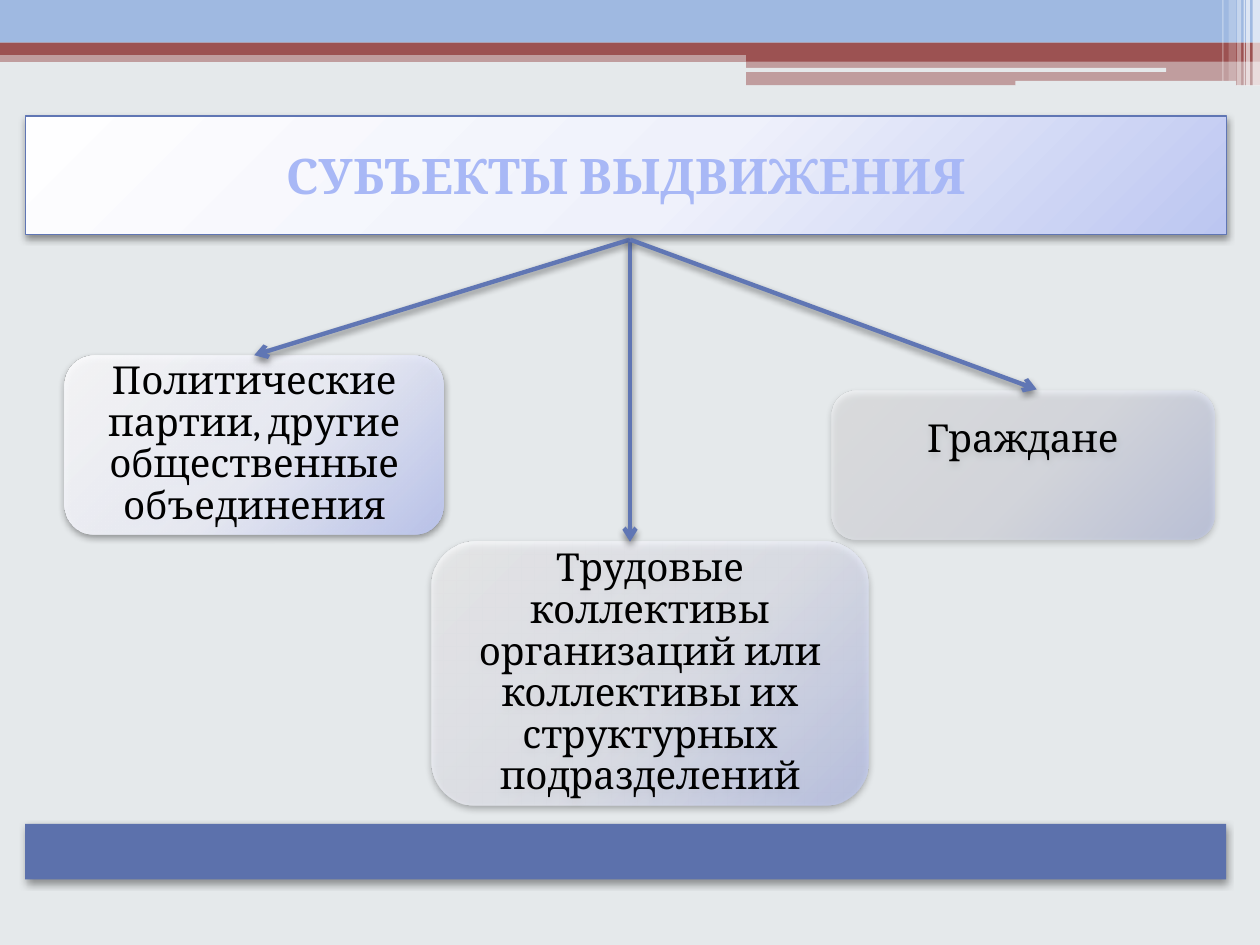
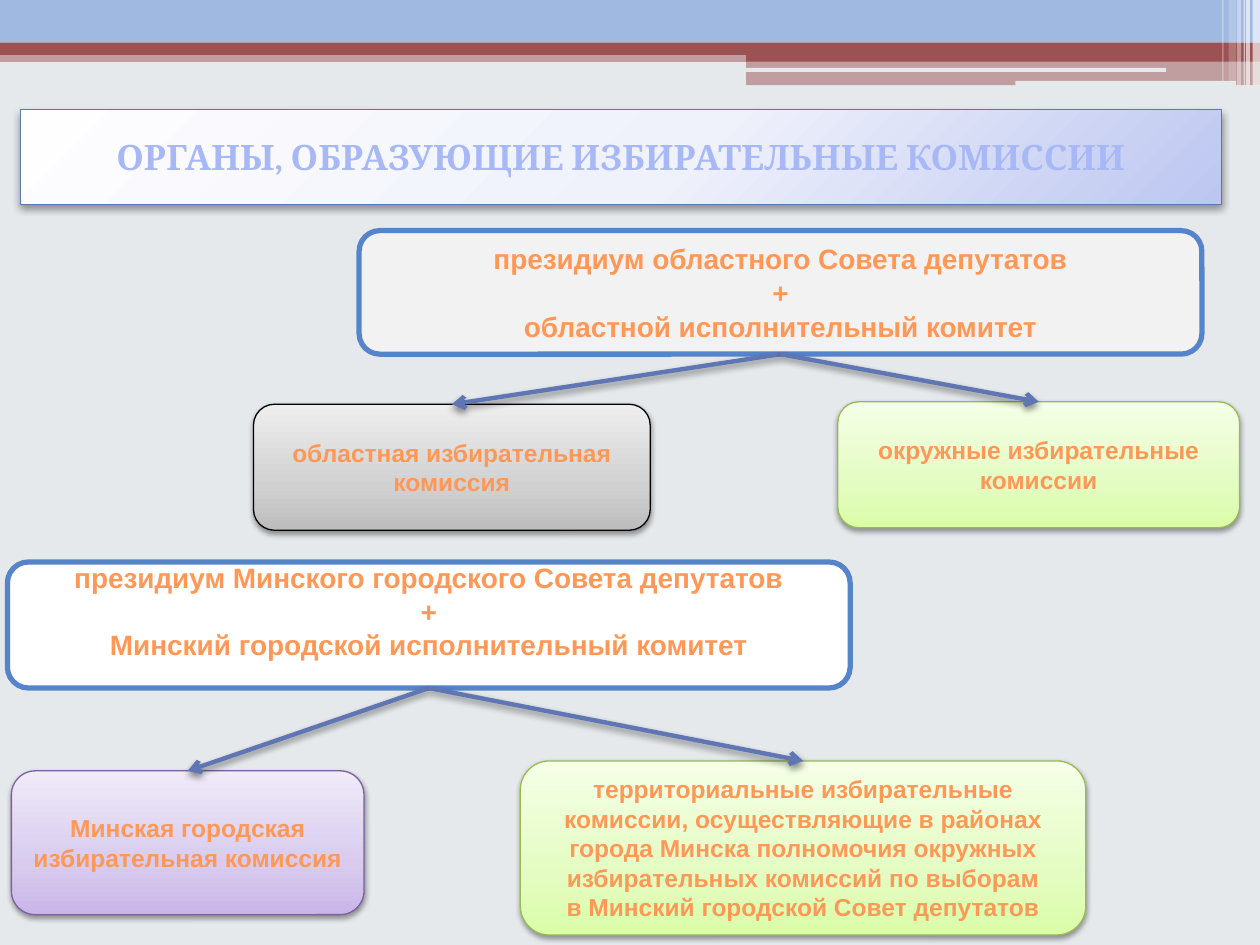
from dataclasses import dataclass
from typing import NamedTuple, Optional

from lxml.etree import SubElement
from pptx import Presentation
from pptx.dml.color import RGBColor
from pptx.enum.shapes import MSO_CONNECTOR, MSO_SHAPE
from pptx.enum.text import MSO_ANCHOR, MSO_AUTO_SIZE, PP_ALIGN
from pptx.oxml.ns import qn
from pptx.util import Cm, Pt

COLOURS = {
    "page": "E5E9EB", "sky": "9FB9E1", "brick": "9C5252", "white": "FFFFFF",
    "black": "000000", "periwinkle": "A8B8F6", "orange": "FF9856",
    "indigo": "6076B4", "base": "5C71AC", "frame": "5684CA", "mist": "F2F2F2",
    "lime line": "98B955", "violet line": "7D60A0",
}
GRADIENTS = {
    "pearl": ((0, "FEFEFF"), (55, "EFF1FB"), (100, "BCC6F1")),
    "grey": ((0, "BDBDBD"), (35, "D1D1D1"), (100, "EEEEEE")),
    "lime": ((0, "DAFDA7"), (35, "E4FCC2"), (100, "F5FFE7")),
    "violet": ((0, "C9B5E8"), (35, "D8CBEE"), (100, "F0EAF9")),
}
TOP, BOTTOM = 0, 2


class Box(NamedTuple):
    left: float
    top: float
    width: float
    height: float

    def lengths(self) -> tuple:
        return tuple(Cm(value) for value in self)


class Shadow(NamedTuple):
    opacity: int
    blur: float
    distance: float


DEEP_SHADOW = Shadow(40, 4.1, 2)
SOFT_SHADOW = Shadow(38, 3.1, 1.6)
ARROW_SHADOW = Shadow(45, 4, 2)


@dataclass(frozen=True)
class Band:
    box: Box
    colour: str
    opacity: int = 100
    rounded: bool = False


@dataclass(frozen=True)
class TextStyle:
    font: str
    size: int
    colour: str
    bold: bool = True
    spacing: float = 1.0
    inset_x: float = 0.25
    inset_y: float = 0.13


SUBJECT_TEXT = TextStyle("Cambria", 22, "black", False, 0.9, 0.23, 0.23)
FOUNDER_TEXT = TextStyle("Arial", 16, "orange")
COMMISSION_TEXT = TextStyle("Arial", 14, "orange")


@dataclass(frozen=True)
class Card:
    box: Box
    paragraphs: tuple
    style: TextStyle
    fill: str
    line: Optional[str] = None
    line_width: float = 0.75
    opacity: int = 100
    shadow: Optional[Shadow] = SOFT_SHADOW
    lift: float = 0  # extra bottom inset that raises the text


BANDS = [
    Band(Box(0, 1.02, 25.4, 0.23), "brick", 50),
    Band(Box(0, 0, 25.4, 0.86), "sky"),
    Band(Box(0, 0.86, 25.4, 0.25), "brick"),
    Band(Box(15.04, 0.99, 10.36, 0.25), "brick"),
    Band(Box(15.04, 1.22, 10.36, 0.5), "brick", 50),
    Band(Box(15.01, 1.37, 8.5, 0.08), "page", rounded=True),
    Band(Box(20.47, 1.63, 4.45, 0.1), "page", rounded=True),
] + [
    Band(Box(left, 0, width, height), "white", opacity)
    for left, width, height, opacity in (
        (25.25, 0.15, 1.73, 65), (25.12, 0.08, 1.73, 65), (25.07, 0.03, 1.73, 60),
        (24.94, 0.08, 1.73, 40), (24.77, 0.15, 1.63, 20), (24.64, 0.03, 1.63, 30),
    )
]

SUBJECTS = [
    Card(Box(1.3, 7.16, 7.65, 3.61),
         ("Политические партии, другие общественные объединения",),
         SUBJECT_TEXT, "pearl", opacity=90, shadow=DEEP_SHADOW),
    Card(Box(8.71, 10.92, 8.79, 5.31),
         ("Трудовые коллективы организаций или коллективы их "
          "структурных подразделений",),
         SUBJECT_TEXT, "pearl", opacity=70, shadow=DEEP_SHADOW),
    Card(Box(16.76, 7.87, 7.72, 3), ("Граждане",),
         SUBJECT_TEXT, "pearl", opacity=50, shadow=DEEP_SHADOW, lift=1),
]

# Each founding body is followed by the commissions it forms.
FOUNDERS = [
    (Card(Box(7.24, 4.65, 16.99, 2.49),
          ("президиум областного Совета депутатов", "+",
           "областной исполнительный комитет"),
          FOUNDER_TEXT, "mist", "frame", 3, shadow=None),
     [Card(Box(5.11, 8.15, 8, 2.54), ("областная избирательная комиссия",),
           COMMISSION_TEXT, "grey", "black"),
      Card(Box(16.89, 8.1, 8.1, 2.54), ("окружные избирательные комиссии",),
           COMMISSION_TEXT, "lime", "lime line")]),
    (Card(Box(0.15, 11.33, 16.99, 2.54),
          ("президиум Минского городского Совета депутатов", "+",
           "Минский городской исполнительный комитет"),
          FOUNDER_TEXT, "white", "frame", 3, shadow=None, lift=0.56),
     [Card(Box(0.23, 15.54, 7.11, 2.9),
           ("Минская городская избирательная комиссия",),
           COMMISSION_TEXT, "violet", "violet line"),
      Card(Box(10.49, 15.34, 11.4, 3.51),
           ("территориальные избирательные комиссии, осуществляющие в районах "
            "города Минска полномочия окружных избирательных комиссий по выборам\n"
            "в Минский городской Совет депутатов",),
           COMMISSION_TEXT, "lime", "lime line")]),
]


def rgb(name: str) -> RGBColor:
    return RGBColor.from_string(COLOURS[name])


def add_colour(parent, value: str, opacity: int) -> None:
    colour = SubElement(parent, qn("a:srgbClr"), val=value)
    if opacity < 100:
        SubElement(colour, qn("a:alpha"), val=str(opacity * 1000))


def paint(shape, fill: str, opacity: int = 100) -> None:
    """Fill with a named colour or gradient at the given opacity."""
    shape.fill.solid()
    properties = shape.element.spPr
    solid = properties.find(qn("a:solidFill"))
    if fill in COLOURS:
        add_colour(solid, COLOURS[fill], opacity)
        return
    gradient = SubElement(properties, qn("a:gradFill"), rotWithShape="1")
    stops = SubElement(gradient, qn("a:gsLst"))
    for position, value in GRADIENTS[fill]:
        add_colour(SubElement(stops, qn("a:gs"), pos=str(position * 1000)),
                   value, opacity)
    if fill == "pearl":
        circle = SubElement(gradient, qn("a:path"), path="circle")
        SubElement(circle, qn("a:fillToRect"),
                   l="-40000", t="-90000", r="140000", b="190000")
    else:
        SubElement(gradient, qn("a:lin"), ang=str(270 * 60000), scaled="0")
    properties.replace(solid, gradient)


def outline(shape, colour: Optional[str], width: float = 0.75) -> None:
    if colour is None:
        shape.line.fill.background()
    else:
        shape.line.color.rgb = rgb(colour)
        shape.line.width = Pt(width)


def cast_shadow(shape, shadow: Optional[Shadow]) -> None:
    """Replace the theme shadow; call after fill and line are set."""
    effects = SubElement(shape.element.spPr, qn("a:effectLst"))
    if shadow:
        outer = SubElement(effects, qn("a:outerShdw"),
                           blurRad=str(Pt(shadow.blur)), dist=str(Pt(shadow.distance)),
                           dir=str(90 * 60000), algn="t", rotWithShape="0")
        add_colour(outer, COLOURS["black"], shadow.opacity)


def write(shape, paragraphs: tuple, style: TextStyle, lift: float = 0) -> None:
    frame = shape.text_frame
    frame.word_wrap = True
    frame.auto_size = MSO_AUTO_SIZE.NONE
    frame.vertical_anchor = MSO_ANCHOR.MIDDLE
    frame.margin_left = frame.margin_right = Cm(style.inset_x)
    frame.margin_top = Cm(style.inset_y)
    frame.margin_bottom = Cm(style.inset_y + lift)
    for index, text in enumerate(paragraphs):
        paragraph = frame.add_paragraph() if index else frame.paragraphs[0]
        paragraph.alignment = PP_ALIGN.CENTER
        paragraph.line_spacing = style.spacing
        for row, line in enumerate(text.split("\n")):
            if row:
                paragraph.add_line_break()
            run = paragraph.add_run()
            run.text = line
            run.font.name = style.font
            run.font.size = Pt(style.size)
            run.font.bold = style.bold
            run.font.color.rgb = rgb(style.colour)


def add_block(slide, box: Box, fill: str, opacity: int = 100, rounded: bool = False):
    kind = MSO_SHAPE.ROUNDED_RECTANGLE if rounded else MSO_SHAPE.RECTANGLE
    block = slide.shapes.add_shape(kind, *box.lengths())
    paint(block, fill, opacity)
    return block


def add_card(slide, card: Card):
    block = add_block(slide, card.box, card.fill, card.opacity, rounded=True)
    outline(block, card.line, card.line_width)
    cast_shadow(block, card.shadow)
    write(block, card.paragraphs, card.style, card.lift)
    return block


def add_arrow(slide, start: tuple = (0, 0), end: tuple = (0, 0),
              source=None, target=None) -> None:
    """Draw an arrow between points, or join it to the given cards."""
    arrow = slide.shapes.add_connector(
        MSO_CONNECTOR.STRAIGHT, *(Cm(value) for value in (*start, *end)))
    if source is not None:
        arrow.begin_connect(source, BOTTOM)
    if target is not None:
        arrow.end_connect(target, TOP)
    outline(arrow, "indigo", 2.5)
    SubElement(arrow.line._get_or_add_ln(), qn("a:tailEnd"), type="arrow")
    cast_shadow(arrow, ARROW_SHADOW)


def set_title(slide, text: str, box: Box, size: int) -> None:
    title = slide.shapes.title
    title.left, title.top, title.width, title.height = box.lengths()
    geometry = SubElement(title.element.spPr, qn("a:prstGeom"), prst="roundRect")
    SubElement(geometry, qn("a:avLst"))
    paint(title, "pearl")
    outline(title, "indigo")
    cast_shadow(title, DEEP_SHADOW)
    write(title, (text,), TextStyle("Cambria", size, "periwinkle"))


def decorate(layout, slide) -> None:
    """Give the layout its background and header bands, built on a slide."""
    layout.background.fill.solid()
    layout.background.fill.fore_color.rgb = rgb("page")
    for band in BANDS:
        strip = add_block(slide, band.box, band.colour, band.opacity, band.rounded)
        outline(strip, None)
        cast_shadow(strip, None)
        layout.shapes.element.append(strip.element)


def build_subjects(slide) -> None:
    set_title(slide, "СУБЪЕКТЫ ВЫДВИЖЕНИЯ", Box(0.51, 2.34, 24.21, 2.39), 28)
    parties, *_ = [add_card(slide, card) for card in SUBJECTS]
    base = add_block(slide, Box(0.51, 16.61, 24.21, 1.12), "base")
    outline(base, None)
    cast_shadow(base, DEEP_SHADOW)
    origin = (12.7, 4.83)
    add_arrow(slide, origin, target=parties)
    for end in ((12.7, 10.92), (20.9, 7.85)):
        add_arrow(slide, origin, end)


def build_commissions(slide) -> None:
    set_title(slide, "ОРГАНЫ, ОБРАЗУЮЩИЕ ИЗБИРАТЕЛЬНЫЕ КОМИССИИ",
              Box(0.41, 2.21, 24.21, 1.91), 20)
    for founder, commissions in FOUNDERS:
        source = add_card(slide, founder)
        for commission in commissions:
            add_arrow(slide, source=source, target=add_card(slide, commission))


def main() -> None:
    deck = Presentation()
    deck.slide_width, deck.slide_height = Cm(25.4), Cm(19.05)
    layout = deck.slide_layouts[5]
    subjects, commissions = (deck.slides.add_slide(layout) for _ in range(2))
    decorate(layout, subjects)
    build_subjects(subjects)
    build_commissions(commissions)
    deck.save("out.pptx")


if __name__ == "__main__":
    main()
